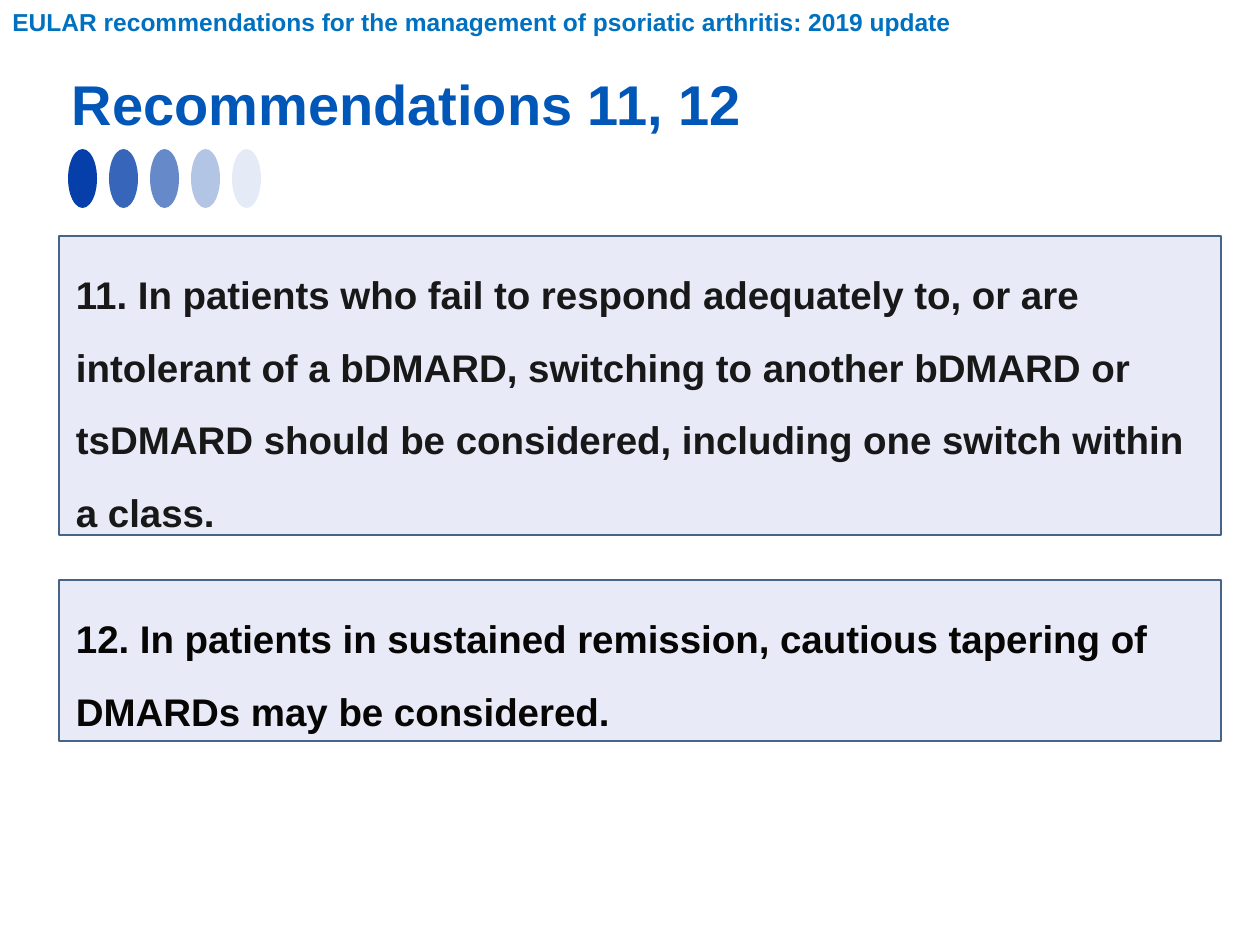
from lxml import etree
from pptx import Presentation, util as u
from pptx.dml.color import RGBColor
from pptx.enum import shapes, text
from pptx.oxml.ns import qn

PX = 914400 // 126
LEFT = 59
COLORS = {
    "header": "0070C0",
    "title": "0057B8",
    "dot": "063FA9",
    "panel": "E8EBF7",
    "border": "466488",
    "text_11": "181818",
    "text_12": "070605",
}


def px(*lengths):
    return [u.Emu(n * PX) for n in lengths]


def rgb(name):
    return RGBColor.from_string(COLORS[name])


def write(sp, words, size, color, anchor, wrap=False):
    tf = sp.text_frame
    tf.text = words
    tf.word_wrap = wrap
    tf.auto_size = text.MSO_AUTO_SIZE.NONE
    tf.vertical_anchor = anchor
    p = tf.paragraphs[0]
    p.alignment = text.PP_ALIGN.LEFT
    font = p.runs[0].font
    font.name, font.size, font.bold = "Arial", u.Pt(size), True
    font.color.rgb = rgb(color)
    return tf


def add_title(s, words):
    sp = s.shapes.title
    sp.left, sp.top, sp.width, sp.height = px(LEFT, 62, 700, 81)
    write(sp, words, 32, "title", text.MSO_ANCHOR.BOTTOM)


def add_header(s, words):
    sp = s.shapes.add_textbox(*px(0, 0, 968, 43))
    write(sp, words, 14, "header", text.MSO_ANCHOR.MIDDLE)


def add_shape(s, kind, box, fill):
    sp = s.shapes.add_shape(kind, *px(*box))
    sp.shadow.inherit = False
    sp.fill.solid()
    sp.fill.fore_color.rgb = rgb(fill)
    return sp


def add_dots(s):
    """Row of ellipses that fade out to the right."""
    for i, opacity in enumerate((100, 80, 61, 30, 10)):
        sp = add_shape(s, shapes.MSO_SHAPE.OVAL, (68 + 41 * i, 149, 29, 59), "dot")
        sp.line.fill.background()
        clr = sp._element.spPr.find(".//" + qn("a:srgbClr"))
        etree.SubElement(clr, qn("a:alpha")).set("val", str(opacity * 1000))


def add_panel(s, top, height, words, color):
    sp = add_shape(s, shapes.MSO_SHAPE.RECTANGLE, (LEFT, top, 1162, height), "panel")
    sp.line.color.rgb = rgb("border")
    sp.line.width = u.Pt(1.25)
    tf = write(sp, words, 22, color, text.MSO_ANCHOR.TOP, wrap=True)
    tf.margin_left, tf.margin_right, tf.margin_top, tf.margin_bottom = px(17, 17, 9, 9)
    tf.paragraphs[0].line_spacing = 1.57


def main():
    prs = Presentation()
    prs.slide_width, prs.slide_height = u.Inches(10), u.Inches(7.5)
    s = prs.slides.add_slide(prs.slide_layouts[5])
    add_dots(s)
    add_panel(s, 236, 299,
              "11. In patients who fail to respond adequately to, or are intolerant of "
              "a bDMARD, switching to another bDMARD or tsDMARD should be considered, "
              "including one switch within a class.", "text_11")
    add_title(s, "Recommendations 11, 12")
    add_panel(s, 580, 161,
              "12. In patients in sustained remission, cautious tapering of DMARDs "
              "may be considered.", "text_12")
    add_header(s, "EULAR recommendations for the management of psoriatic arthritis: "
                  "2019 update")
    prs.save("out.pptx")


if __name__ == "__main__":
    main()
